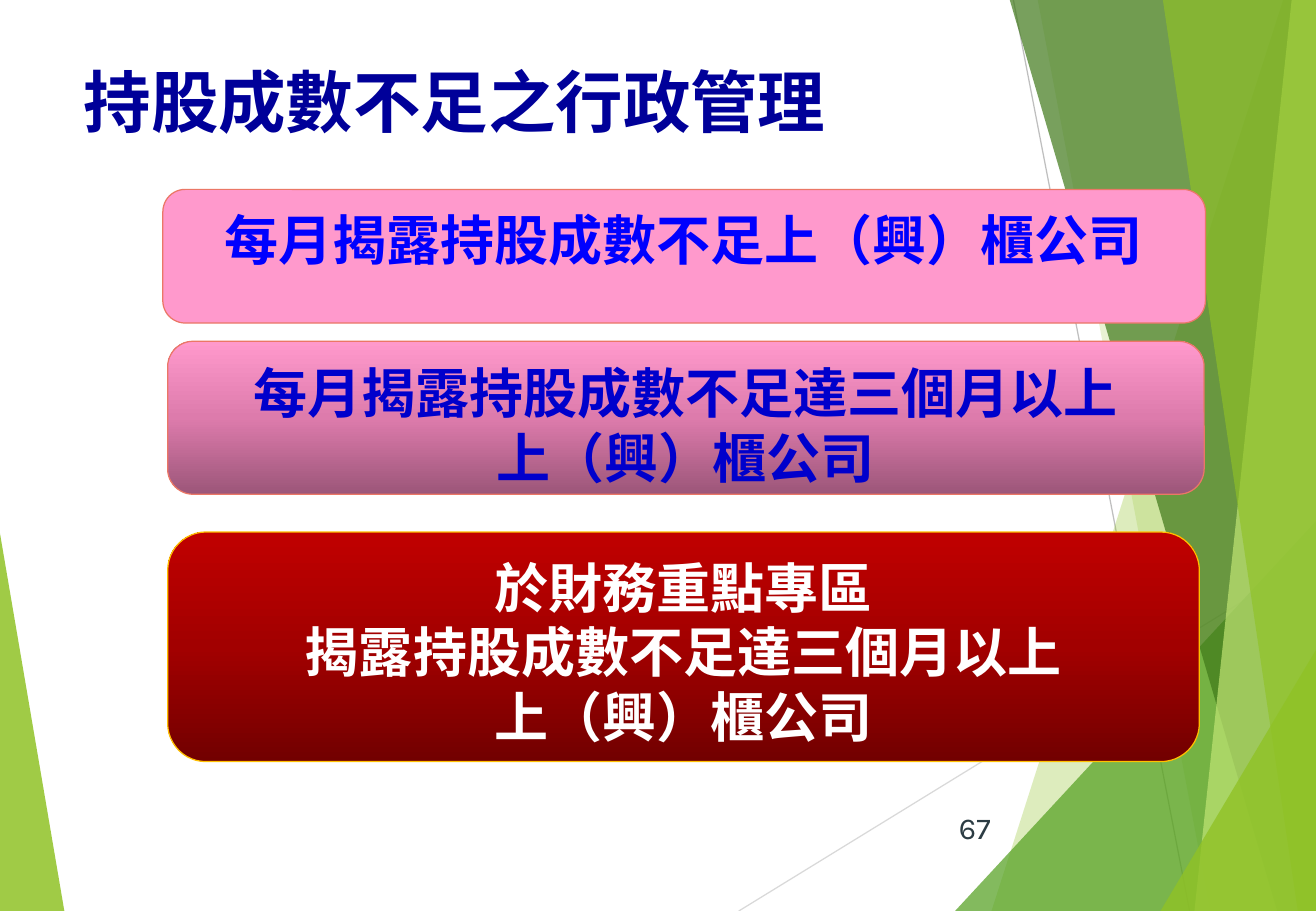
from copy import deepcopy

from lxml.etree import SubElement
from pptx import Presentation
from pptx.dml.color import RGBColor
from pptx.enum.shapes import MSO_CONNECTOR, MSO_SHAPE
from pptx.enum.text import MSO_ANCHOR as Anchor, PP_ALIGN as Align
from pptx.oxml.ns import qn
from pptx.util import Inches, Pt

WIDTH, HEIGHT = 10.83, 7.5
HEADING_FONT, NUMBER_FONT = "Noto Sans CJK SC", "Karla"
WHITE = RGBColor(0xFF, 0xFF, 0xFF)
NAVY = RGBColor(0x00, 0x00, 0x99)
BLUE = RGBColor(0x00, 0x00, 0xFF)
DARK_BLUE = RGBColor(0x00, 0x00, 0xCC)
SLATE = RGBColor(0x2C, 0x3C, 0x43)
PINK = RGBColor(0xFF, 0x99, 0xCC)
MID_PINK = RGBColor(0xDD, 0x7B, 0xAC)
PLUM = RGBColor(0x9C, 0x56, 0x79)
CORAL = RGBColor(0xEB, 0x77, 0x66)
RED = RGBColor(0xC0, 0x00, 0x00)
MID_RED = RGBColor(0xA2, 0x00, 0x00)
DARK_RED = RGBColor(0x72, 0x00, 0x00)
GOLD = RGBColor(0xFF, 0xC0, 0x00)
LIME = RGBColor(0x90, 0xC2, 0x26)
GREEN = RGBColor(0x54, 0xA0, 0x21)
FOREST = RGBColor(0x3F, 0x78, 0x19)
PALE_LIME = RGBColor(0xC0, 0xE4, 0x74)
LIGHT_GRAY = RGBColor(0xD9, 0xD9, 0xD9)
GRAY = RGBColor(0xBF, 0xBF, 0xBF)

RAYS = [
    ((6.08, HEIGHT), (WIDTH, 4.58), LIGHT_GRAY),
    ((8.34, 0), (9.79, HEIGHT), GRAY),
]
LEFT_FACET = [([(0, 4.39), (0.53, HEIGHT), (0, HEIGHT)], LIME, 85)]
RIGHT_FACETS = [
    ([(top_x, top_y), (bottom_x, HEIGHT), (WIDTH, HEIGHT), (WIDTH, top_y)], color, opacity)
    for top_x, top_y, bottom_x, color, opacity in [
        (10.56, 0, 8.16, LIME, 30),
        (8.54, 0, 9.96, LIME, 20),
        (WIDTH, 4.29, 7.86, GREEN, 72),
        (8.31, 0, 10.51, FOREST, 70),
        (10.63, 0, 9.83, PALE_LIME, 70),
        (9.57, 0, 10.68, LIME, 65),
        (WIDTH, 5.35, 9.55, LIME, 80),
    ]
]
MEASURES = [
    ((1.34, 1.56, 8.58, 1.1), [PINK], CORAL, BLUE,
     ["每月揭露持股成數不足上（興）櫃公司"]),
    ((1.38, 2.81, 8.53, 1.26), [PLUM, MID_PINK, PINK], CORAL, DARK_BLUE,
     ["每月揭露持股成數不足達三個月以上", "上（興）櫃公司"]),
    ((1.38, 4.38, 8.49, 1.89), [DARK_RED, MID_RED, RED], GOLD, WHITE,
     ["於財務重點專區", "揭露持股成數不足達三個月以上", "上（興）櫃公司"]),
]


def draw_facets(page, box, facets):
    left, top = box[:2]
    for points, color, opacity in facets:
        corners = [(Inches(left + x), Inches(top + y)) for x, y in points]
        builder = page.shapes.build_freeform(*corners[0])
        builder.add_line_segments(corners[1:], close=True)
        facet = builder.convert_to_shape()
        facet.shadow.inherit = False
        facet.fill.solid()
        facet.fill.fore_color.rgb = color
        facet.line.fill.background()
        tint = facet.element.spPr.find(qn("a:solidFill"))[0]
        SubElement(tint, qn("a:alpha"), val=str(opacity * 1000))


def draw_rays(page, box):
    left, top = box[:2]
    for start, end, color in RAYS:
        ends = [Inches(origin + offset) for point in (start, end)
                for origin, offset in zip((left, top), point)]
        ray = page.shapes.add_connector(MSO_CONNECTOR.STRAIGHT, *ends)
        ray.line.color.rgb = color
        ray.line.width = Pt(0.75)
        SubElement(ray.element.spPr, qn("a:effectLst"))


def write_lines(frame, lines, color, align, values):
    for index, line in enumerate(lines):
        para = frame.paragraphs[0] if index == 0 else frame.add_paragraph()
        para.alignment = align
        para.line_spacing = Pt(values["size"].pt * 1.2)
        span = para.add_run()
        span.text = line
        span.font.color.rgb = color
        for name, value in values.items():
            setattr(span.font, name, value)
        SubElement(span.font._element, qn("a:ea"), typeface=values["name"])


def add_label(page, box, text, color, align, anchor, values):
    label = page.shapes.add_textbox(*map(Inches, box))
    frame = label.text_frame
    frame.word_wrap = True
    frame.vertical_anchor = anchor
    if anchor == Anchor.TOP:
        frame.margin_top = Inches(0.1)
    write_lines(frame, [text], color, align, values)


def fill_measure(measure, colors):
    if len(colors) == 1:
        measure.fill.solid()
        measure.fill.fore_color.rgb = colors[0]
        return
    measure.fill.gradient()
    measure.fill.gradient_angle = 90
    stops = measure.element.spPr.find(qn("a:gradFill")).find(qn("a:gsLst"))
    stops.insert(1, deepcopy(stops[0]))
    for index, (stop, color) in enumerate(zip(measure.fill.gradient_stops, colors)):
        stop.position = index / (len(colors) - 1)
        stop.color.rgb = color


def add_measure(page, box, colors, border, text_color, lines):
    measure = page.shapes.add_shape(MSO_SHAPE.ROUNDED_RECTANGLE, *map(Inches, box))
    measure.shadow.inherit = False
    measure.adjustments[0] = 0.167
    fill_measure(measure, colors)
    measure.line.color.rgb = border
    measure.line.width = Pt(0.75)
    frame = measure.text_frame
    frame.word_wrap = False
    frame.vertical_anchor = Anchor.TOP
    frame.margin_top = Inches(0.09)
    write_lines(frame, lines, text_color, Align.CENTER,
                {"name": HEADING_FONT, "size": Pt(32), "bold": True})


def build_page(page, box):
    draw_facets(page, box, LEFT_FACET)
    draw_rays(page, box)
    draw_facets(page, box, RIGHT_FACETS)
    left, top = box[:2]
    add_label(page, (left + 7.64, top + 6.61, 0.61, 0.4), "67", SLATE, Align.RIGHT,
              Anchor.MIDDLE, {"name": NUMBER_FONT, "size": Pt(18)})
    add_label(page, (left + 0.59, top + 0.39, 10.24, 1.09), "持股成數不足之行政管理", NAVY,
              Align.LEFT, Anchor.TOP, {"name": HEADING_FONT, "size": Pt(40), "bold": True})
    for (x, y, width, height), *style in MEASURES:
        add_measure(page, (left + x, top + y, width, height), *style)


def main():
    deck = Presentation()
    deck.slide_width, deck.slide_height = Inches(WIDTH), Inches(HEIGHT)
    page = deck.slides.add_slide(deck.slide_layouts[6])
    build_page(page, (0, 0, WIDTH, HEIGHT))
    deck.save("out.pptx")


if __name__ == "__main__":
    main()
